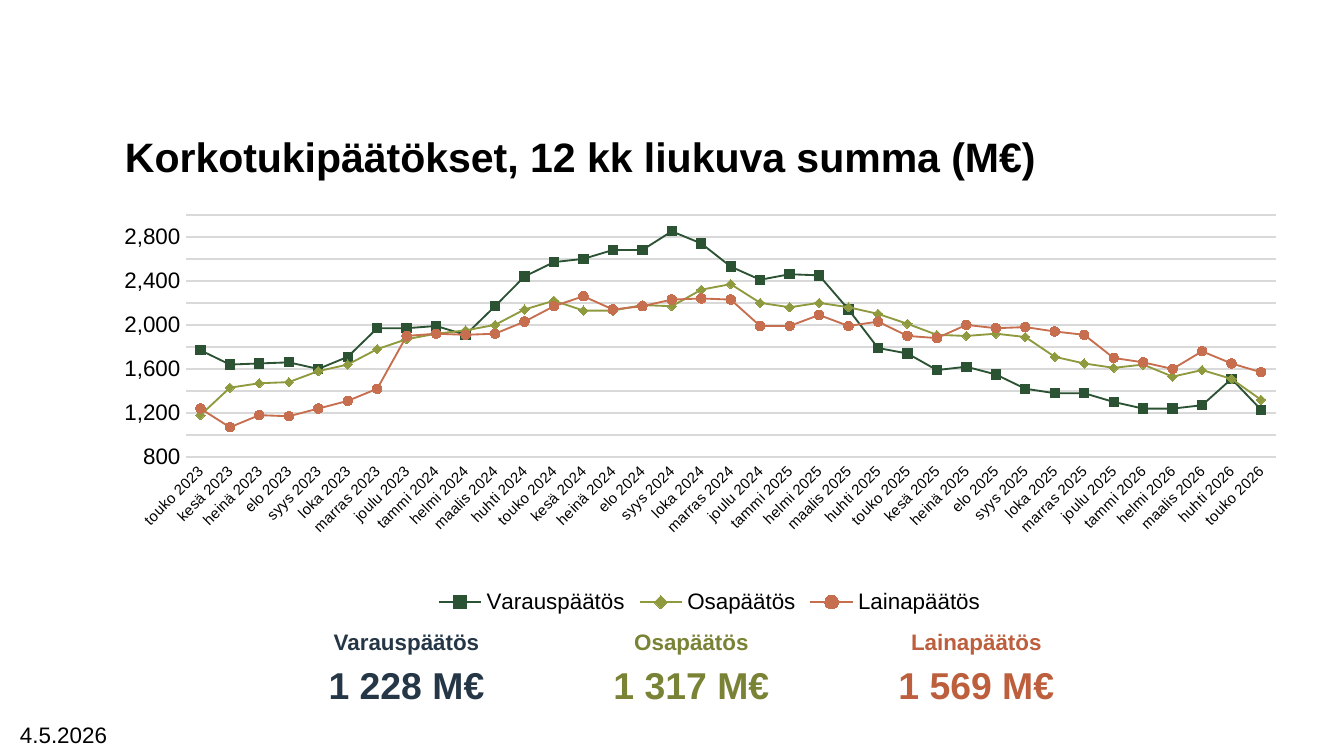
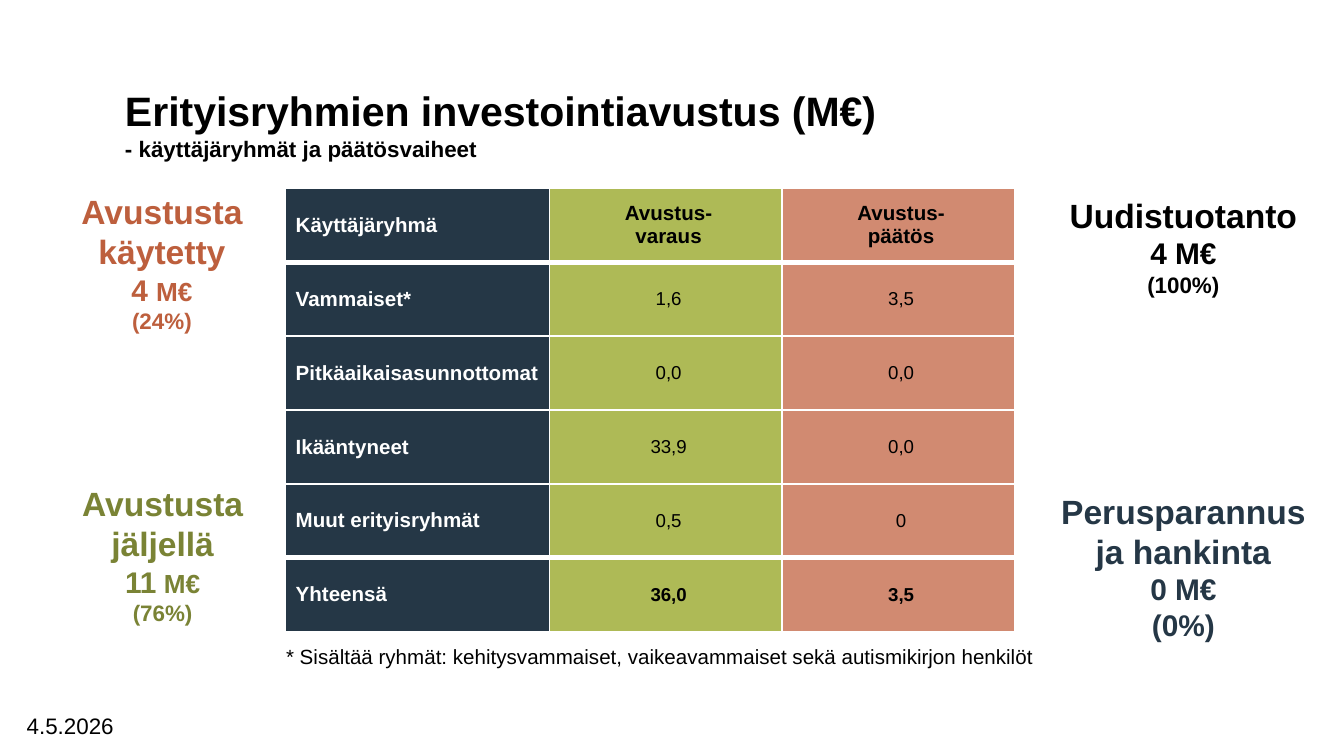
from lxml.etree import SubElement
from pptx import Presentation
from pptx.chart.data import CategoryChartData
from pptx.dml.color import RGBColor
from pptx.enum.chart import XL_CHART_TYPE, XL_LEGEND_POSITION, XL_MARKER_STYLE, XL_TICK_MARK
from pptx.enum.text import MSO_ANCHOR, MSO_AUTO_SIZE, PP_ALIGN
from pptx.oxml import parse_xml
from pptx.oxml.ns import nsdecls, qn
from pptx.util import Inches, Pt

# Shared style
FONT = "Arial"
COLORS = {
    "black": "000000", "white": "FFFFFF", "grid": "D9D9D9", "navy": "253746",
    "olive": "7A8335", "rust": "BD5F3D", "light_olive": "AEBA56", "light_rust": "D18A71",
    "line_green": "2C5234", "line_olive": "8F993E", "line_rust": "C66E4E",
}
DATE = "4.5.2026"

# Slide 1 content
TREND_TITLE = [("Korkotukipäätökset, 12 kk liukuva summa (M€)", 22)]
MONTHS = ["tammi", "helmi", "maalis", "huhti", "touko", "kesä",
          "heinä", "elo", "syys", "loka", "marras", "joulu"]
FIRST_MONTH, FIRST_YEAR = 4, 2023
DECISIONS = [
    ("Varauspäätös", "line_green", XL_MARKER_STYLE.SQUARE,
     [1770, 1640, 1650, 1660, 1600, 1710, 1970, 1970, 1990, 1910, 2170, 2440, 2570,
      2600, 2680, 2680, 2850, 2740, 2530, 2410, 2460, 2450, 2140, 1790, 1740, 1590,
      1620, 1550, 1420, 1380, 1380, 1300, 1240, 1240, 1270, 1510, 1230]),
    ("Osapäätös", "line_olive", XL_MARKER_STYLE.DIAMOND,
     [1180, 1430, 1470, 1480, 1580, 1640, 1780, 1870, 1920, 1950, 2000, 2140, 2220,
      2130, 2130, 2180, 2170, 2320, 2370, 2200, 2160, 2200, 2160, 2100, 2010, 1910,
      1900, 1920, 1890, 1710, 1650, 1610, 1640, 1530, 1590, 1510, 1320]),
    ("Lainapäätös", "line_rust", XL_MARKER_STYLE.CIRCLE,
     [1240, 1070, 1180, 1170, 1240, 1310, 1420, 1900, 1920, 1910, 1920, 2030, 2170,
      2260, 2140, 2170, 2230, 2240, 2230, 1990, 1990, 2090, 1990, 2030, 1900, 1880,
      2000, 1970, 1980, 1940, 1910, 1700, 1660, 1600, 1760, 1650, 1570]),
]
PLOT_LAYOUT = {"x": 0.054, "y": 0.041, "w": 0.928, "h": 0.574}
TOTALS = [("Varauspäätös", "1 228 M€", "navy"),
          ("Osapäätös", "1 317 M€", "olive"),
          ("Lainapäätös", "1 569 M€", "rust")]

# Slide 2 content
GRANT_TITLE = [("Erityisryhmien investointiavustus (M€)", 22),
               ("- käyttäjäryhmät ja päätösvaiheet", 12)]
GRANT_ROWS = [
    ("Käyttäjäryhmä", "Avustus-\nvaraus", "Avustus-\npäätös"),
    ("Vammaiset*", "1,6", "3,5"),
    ("Pitkäaikaisasunnottomat", "0,0", "0,0"),
    ("Ikääntyneet", "33,9", "0,0"),
    ("Muut erityisryhmät", "0,5", "0"),
    ("Yhteensä", "36,0", "3,5"),
]
GRANT_COLUMNS = [(1.97, "navy"), (1.73, "light_olive"), (1.73, "light_rust")]
ROW_HEIGHT = 0.55
# left, top, width, anchor, colour, paragraphs of (text, size) runs
SIDE_NOTES = [
    (0.5, 1.4, 1.41, MSO_ANCHOR.MIDDLE, "rust",
     [[("Avustusta käytetty", 18)], [("4 ", 16), ("M€", 14)], [("(24%)", 12)]]),
    (0.5, 3.57, 1.42, MSO_ANCHOR.MIDDLE, "olive",
     [[("Avustusta jäljellä", 18)], [("11", 16), (" M€", 14)], [("(76%)", 12)]]),
    (7.76, 1.4, 2.09, MSO_ANCHOR.TOP, "black",
     [[("Uudistuotanto", 18)], [("4 M€", 16)], [("(100%)", 12)]]),
    (7.76, 3.6, 2.09, MSO_ANCHOR.TOP, "navy",
     [[("Perusparannus ja hankinta", 18)], [("0 M€", 16)], [("(0%)", 16)]]),
]
NOTE_HEIGHT = 1.11
FOOTNOTE = "* Sisältää ryhmät: kehitysvammaiset, vaikeavammaiset sekä autismikirjon henkilöt"


def rgb(name):
    return RGBColor.from_string(COLORS[name])


def style_font(font, size, color="black", bold=False):
    font.name, font.size, font.bold = FONT, Pt(size), bold
    font.color.rgb = rgb(color)


def add_span(para, text, size, color="black", bold=False):
    span = para.add_run()
    span.text = text
    style_font(span.font, size, color, bold)


def fill_frame(frame, paragraphs, color="black", bold=False, align=PP_ALIGN.LEFT, gap=0):
    """Write paragraphs, each a list of (text, size) runs, without bullets."""
    for index, spans in enumerate(paragraphs):
        para = frame.paragraphs[0] if index == 0 else frame.add_paragraph()
        properties = para._p.get_or_add_pPr()
        properties.set("marL", "0")
        properties.set("indent", "0")
        SubElement(properties, qn("a:buNone"))
        para.alignment = align
        para.space_before = Pt(gap if index else 0)
        for text, size in spans:
            add_span(para, text, size, color, bold)


def place(shape, left, top, width, height):
    shape.left, shape.top = Inches(left), Inches(top)
    shape.width, shape.height = Inches(width), Inches(height)


def set_frame(shape, anchor):
    frame = shape.text_frame
    frame.word_wrap = True
    frame.auto_size = MSO_AUTO_SIZE.NONE
    frame.vertical_anchor = anchor
    return frame


def add_text(page, left, top, width, height, paragraphs, anchor=MSO_ANCHOR.TOP, **style):
    box = page.shapes.add_textbox(Inches(left), Inches(top), Inches(width), Inches(height))
    fill_frame(set_frame(box, anchor), paragraphs, **style)


def add_page(deck, layout_name, title_lines, title_at, date_at):
    page = deck.slides.add_slide(deck.slide_layouts.get_by_name(layout_name))
    title = page.shapes.title
    place(title, *title_at)
    para = set_frame(title, MSO_ANCHOR.MIDDLE).paragraphs[0]
    para.alignment = PP_ALIGN.LEFT
    for index, (text, size) in enumerate(title_lines):
        if index:
            para.add_line_break()
        add_span(para, text, size, bold=True)
    add_text(page, *date_at, 1.75, 0.25, [[(DATE, 12)]])
    return page


def add_trend_chart(page):
    data = CategoryChartData(number_format="#,##0")
    for step in range(len(DECISIONS[0][3])):
        years, month = divmod(FIRST_MONTH + step, 12)
        data.add_category(f"{MONTHS[month]} {FIRST_YEAR + years}")
    for name, _, _, values in DECISIONS:
        data.add_series(name, values)
    chart = page.shapes.add_chart(XL_CHART_TYPE.LINE_MARKERS, Inches(0.91), Inches(1.47),
                                  Inches(8.74), Inches(3.14), data).chart
    style_font(chart.font, 10)
    chart.has_title = False
    chart.has_legend = True
    chart.legend.position = XL_LEGEND_POSITION.BOTTOM
    chart.legend.include_in_layout = False
    style_font(chart.legend.font, 12)

    # Axes
    months, amounts = chart.category_axis, chart.value_axis
    for axis, size in ((months, 8), (amounts, 12)):
        axis.major_tick_mark = axis.minor_tick_mark = XL_TICK_MARK.NONE
        style_font(axis.tick_labels.font, size)
    amounts.minimum_scale, amounts.maximum_scale, amounts.major_unit = 800, 3000, 200
    amounts.tick_labels.number_format = "#,##0"
    amounts.tick_labels.number_format_is_linked = False
    amounts.format.line.fill.background()
    for line in (months.format.line, amounts.major_gridlines.format.line):
        line.color.rgb, line.width = rgb("grid"), Pt(0.75)
    for body in chart.element.xpath(".//c:catAx/c:txPr/a:bodyPr"):
        body.set("rot", "-2700000")

    # Series
    chart.plots[0].vary_by_categories = False
    for series, (_, color, marker, _) in zip(chart.plots[0].series, DECISIONS):
        series.smooth = False
        series.format.line.color.rgb, series.format.line.width = rgb(color), Pt(1)
        series.marker.style, series.marker.size = marker, 5
        series.marker.format.fill.solid()
        series.marker.format.fill.fore_color.rgb = rgb(color)
        series.marker.format.line.color.rgb = rgb(color)

    # Fixed inner plot area
    plot_area = chart.element.xpath(".//c:plotArea")[0]
    for old in plot_area.findall(qn("c:layout")):
        plot_area.remove(old)
    modes = "".join(f'<c:{key}Mode val="edge"/>' for key in "xy")
    sizes = "".join(f'<c:{key} val="{value}"/>' for key, value in PLOT_LAYOUT.items())
    plot_area.insert(0, parse_xml(
        f'<c:layout {nsdecls("c")}><c:manualLayout><c:layoutTarget val="inner"/>'
        f'{modes}{sizes}</c:manualLayout></c:layout>'))


def set_borders(cell, top, bottom):
    properties = cell._tc.get_or_add_tcPr()
    for index, (side, width) in enumerate((("L", 1), ("R", 1), ("T", top), ("B", bottom))):
        properties.insert(index, parse_xml(
            f'<a:ln{side} {nsdecls("a")} w="{Pt(width)}"><a:solidFill>'
            f'<a:srgbClr val="{COLORS["white"]}"/></a:solidFill></a:ln{side}>'))


def add_grant_table(page):
    last = len(GRANT_ROWS) - 1
    width = sum(column_width for column_width, _ in GRANT_COLUMNS)
    table = page.shapes.add_table(len(GRANT_ROWS), len(GRANT_COLUMNS), Inches(2.12), Inches(1.4),
                                  Inches(width), Inches(ROW_HEIGHT * len(GRANT_ROWS))).table
    table.horz_banding = False
    for column, (column_width, _) in zip(table.columns, GRANT_COLUMNS):
        column.width = Inches(column_width)
    for r, texts in enumerate(GRANT_ROWS):
        table.rows[r].height = Inches(ROW_HEIGHT)
        for c, text in enumerate(texts):
            cell = table.cell(r, c)
            cell.fill.solid()
            cell.fill.fore_color.rgb = rgb(GRANT_COLUMNS[c][1])
            cell.vertical_anchor = MSO_ANCHOR.MIDDLE
            cell.margin_left = Inches(0.08)
            cell.margin_right = cell.margin_top = cell.margin_bottom = Inches(0.04)
            size = 11 if r == 0 or c == 0 else 10
            fill_frame(cell.text_frame, [[(line, size)] for line in text.split("\n")],
                       color="black" if c else "white", bold=c == 0 or r in (0, last),
                       align=PP_ALIGN.CENTER if c else PP_ALIGN.LEFT)
            set_borders(cell, top=3 if r in (1, last) else 1,
                        bottom=3 if r in (0, last - 1) else 1)


def build_trend_page(deck):
    page = add_page(deck, "Comparison", TREND_TITLE, (0.83, 0.97, 8.82, 0.38), (0.05, 5.32))
    bodies = [item for item in page.placeholders if item.placeholder_format.idx in (1, 2, 3, 4)]
    for index, (body, (name, amount, color)) in enumerate(zip(bodies, TOTALS)):
        place(body, 2 + index * 2.12, 4.62, 2.05, 0.94)
        body.fill.solid()
        body.fill.fore_color.rgb = rgb("white")
        fill_frame(set_frame(body, MSO_ANCHOR.TOP), [[(name, 12)], [(amount, 20)]],
                   color=color, bold=True, align=PP_ALIGN.CENTER, gap=4)
    for unused in bodies[len(TOTALS):]:
        unused.element.getparent().remove(unused.element)
    add_trend_chart(page)


def build_grant_page(deck):
    page = add_page(deck, "Title Only", GRANT_TITLE, (0.83, 0.73, 6.86, 0.38), (0.1, 5.25))
    add_grant_table(page)
    for left, top, width, anchor, color, paragraphs in SIDE_NOTES:
        add_text(page, left, top, width, NOTE_HEIGHT, paragraphs, anchor,
                 color=color, bold=True, align=PP_ALIGN.CENTER)
    add_text(page, 2.03, 4.74, 6.95, 0.29, [[(FOOTNOTE, 11)]])


def main():
    deck = Presentation()
    deck.slide_width = Inches(10)
    deck.slide_height = deck.slide_width * 9 // 16
    build_trend_page(deck)
    build_grant_page(deck)
    deck.save("out.pptx")


if __name__ == "__main__":
    main()
